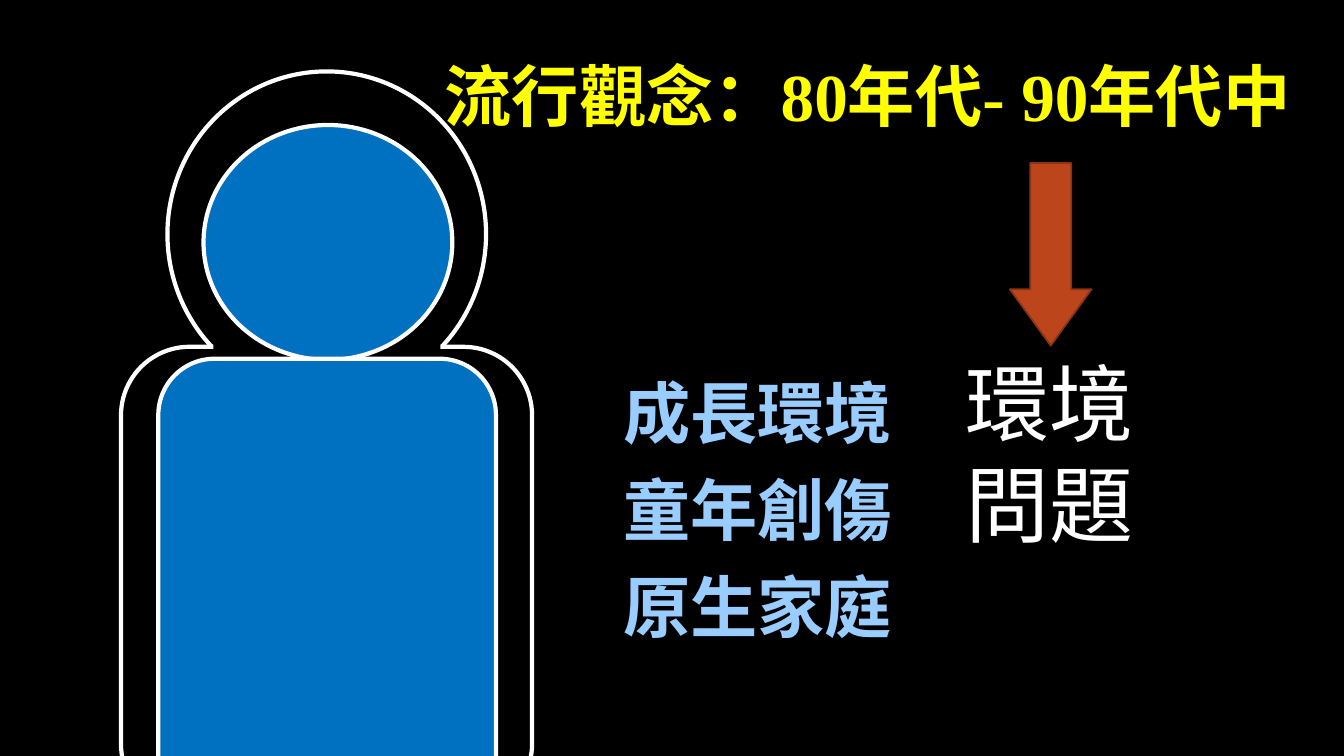
import dataclasses
import pptx
import pptx.util
import pptx.dml.color
import pptx.enum.shapes
import pptx.enum.text

Cm = pptx.util.Cm
Pt = pptx.util.Pt
Kind = pptx.enum.shapes.MSO_SHAPE
Align = pptx.enum.text.PP_ALIGN


@dataclasses.dataclass
class Theme:
    black: str = "000000"
    white: str = "FFFFFF"
    blue: str = "0070C0"
    pale: str = "99CCFF"
    gold: str = "FFFF00"
    rust: str = "BC451B"
    edge: str = "8B3314"
    serif: str = "Times New Roman"
    sans: str = "Roboto"
    main: int = 48
    large: int = 60


theme = Theme()


def tint(code):
    return pptx.dml.color.RGBColor.from_string(code)


def write(frame, lines, face, size, code, bold, align, after):
    frame.word_wrap = True
    frame.auto_size = pptx.enum.text.MSO_AUTO_SIZE.NONE
    frame.vertical_anchor = pptx.enum.text.MSO_ANCHOR.TOP
    for i, line in enumerate(lines):
        para = frame.paragraphs[0] if i == 0 else frame.add_paragraph()
        para.alignment = align
        para.space_after = Pt(after)
        run = para.add_run()
        run.text = line
        run.font.name = face
        run.font.size = Pt(size)
        run.font.bold = bold
        run.font.color.rgb = tint(code)


deck = pptx.Presentation()
deck.slide_width = Cm(33.87)
deck.slide_height = Cm(19.05)
slide = deck.slides.add_slide(deck.slide_layouts[5])
slide.background.fill.solid()
slide.background.fill.fore_color.rgb = tint(theme.black)

figure = [
    (Kind.OVAL, (4.22, 1.8, 8.03, 8.2), theme.black, theme.white, 3),
    (Kind.ROUNDED_RECTANGLE, (3.05, 8.74, 10.36, 11.73), theme.black, theme.white, 3),
    (Kind.RECTANGLE, (5.38, 8.36, 5.72, 0.89), theme.black, None, 0),
    (Kind.OVAL, (5.13, 3.15, 6.27, 5.92), theme.blue, theme.white, 3),
    (Kind.ROUNDED_RECTANGLE, (3.99, 9.04, 8.51, 11.51), theme.blue, theme.white, 3),
    (Kind.DOWN_ARROW, (25.45, 4.11, 2.06, 4.6), theme.rust, theme.edge, 1.25),
]
for kind, place, fill, line, width in figure:
    shape = slide.shapes.add_shape(kind, *map(Cm, place))
    shape.shadow.inherit = False
    shape.fill.solid()
    shape.fill.fore_color.rgb = tint(fill)
    if line:
        shape.line.color.rgb = tint(line)
        shape.line.width = Pt(width)
    else:
        shape.line.fill.background()
    if kind == Kind.DOWN_ARROW:
        shape.adjustments[0] = 0.5
        shape.adjustments[1] = 0.69

cause = slide.shapes.add_textbox(Cm(15.14), Cm(9.22), Cm(7.9), Cm(7.26))
write(cause.text_frame, ["成長環境", "童年創傷", "原生家庭"],
      theme.serif, theme.main, theme.pale, True, Align.CENTER, 12)

issue = slide.shapes.add_textbox(Cm(24.08), Cm(8.74), Cm(5.54), Cm(5.38))
write(issue.text_frame, ["環境", "問題"],
      theme.sans, theme.large, theme.white, False, Align.LEFT, 0)

title = slide.shapes.title
title.left, title.top, title.width, title.height = map(Cm, (10.11, 1.24, 22.66, 2.31))
write(title.text_frame, ["流行觀念：80年代- 90年代中"],
      theme.serif, theme.main, theme.gold, True, Align.RIGHT, 0)
slide.shapes._spTree.append(title._element)

deck.save("out.pptx")
